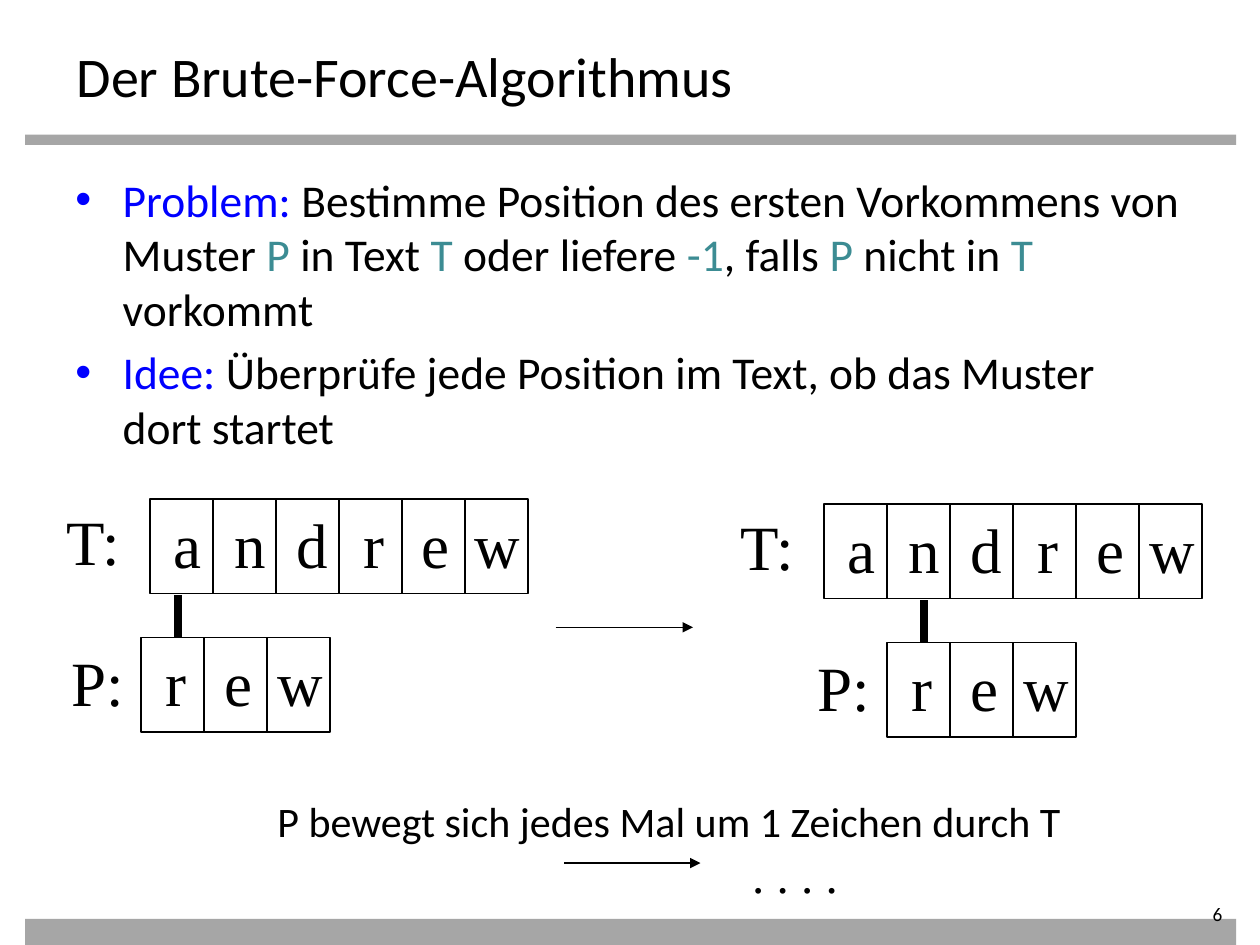
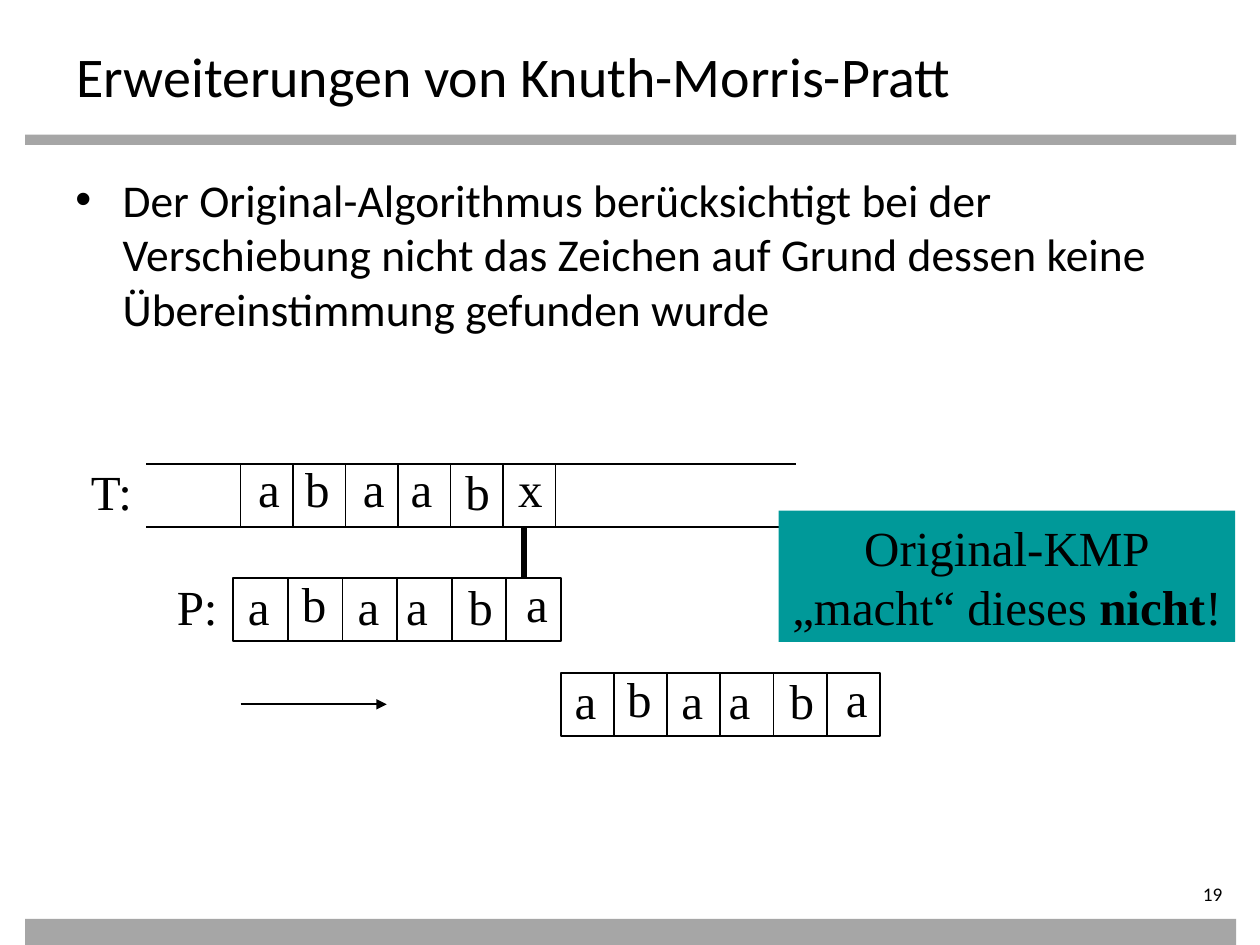
from pptx import Presentation
from pptx.dml.color import RGBColor
from pptx.enum.shapes import MSO_CONNECTOR as CONNECTOR, MSO_SHAPE as SHAPE
from pptx.enum.text import MSO_ANCHOR as ANCHOR, PP_ALIGN as ALIGN
from pptx.oxml.ns import qn
from pptx.util import Pt
from lxml.etree import SubElement

BLACK, GREY, BLUE, TEAL, CALLOUT = "000000", "A6A6A6", "0000FF", "3C8C93", "009999"
SANS, SERIF = "Calibri", "Times New Roman"

# Letter widths of the serif face, in ems
EM = {"a": .44, "e": .44, "r": .33, "w": .72, "T": .61, "P": .56, ":": .28}
# Sideways shifts of the letters within their cells
ANDREW_SHIFTS = {"a": 3.6, "n": 3.1, "d": 2.5, "r": 2, "e": 1.4, "w": 0.7}
TEXT_NUDGES = [(1.2, -4), (-1.1, -4), (1, -4), (-1.7, -4), (0.4, -2.5), (0.6, -4)]
PATTERN_NUDGES = [(-1, -2.5), (-0.6, -4), (-0.8, -2.5), (-4.2, -2.5), (1, -2.5), (2, -4)]


def rgb(value):
    return RGBColor.from_string(value)


def style(font, size, face, color=BLACK):
    font.size, font.name = Pt(size), face
    font.color.rgb = rgb(color)


def rect(slide, left, top, width, height, fill=None, line=None):
    shape = slide.shapes.add_shape(SHAPE.RECTANGLE, Pt(left), Pt(top), Pt(width), Pt(height))
    shape.shadow.inherit = False
    if fill:
        shape.fill.solid()
        shape.fill.fore_color.rgb = rgb(fill)
    else:
        shape.fill.background()
    if line:
        shape.line.color.rgb = rgb(line)
        shape.line.width = Pt(1)
    else:
        shape.line.fill.background()
    return shape


def rule(slide, x1, y1, x2, y2, weight=1, arrow=False):
    line = slide.shapes.add_connector(CONNECTOR.STRAIGHT, Pt(x1), Pt(y1), Pt(x2), Pt(y2))
    line.line.color.rgb = rgb(BLACK)
    line.line.width = Pt(weight)
    properties = line._element.spPr
    if arrow:
        SubElement(properties.find(qn("a:ln")), qn("a:tailEnd"), type="triangle")
    SubElement(properties, qn("a:effectLst"))


def text_box(slide, left, top, width, height, wrap=True):
    frame = slide.shapes.add_textbox(Pt(left), Pt(top), Pt(width), Pt(height)).text_frame
    frame.word_wrap = wrap
    return frame


def centred(slide, text, x, y, size, width=None, face=SERIF):
    """One line of text centred on a point."""
    if width is None:
        width = sum(EM.get(letter, 0.5) for letter in text) * size + 14.4
    height = size * 1.2 + 7.2
    frame = text_box(slide, x - width / 2, y - height / 2, width, height, wrap=False)
    frame.vertical_anchor = ANCHOR.MIDDLE
    frame.text = text
    frame.paragraphs[0].alignment = ALIGN.CENTER
    style(frame.paragraphs[0].runs[0].font, size, face)


def letters(slide, word, left, top, cell, height, size, nudges):
    for i, (letter, (dx, dy)) in enumerate(zip(word, nudges)):
        centred(slide, letter, left + (i + 0.5) * cell + dx, top + height / 2 + dy, size)


def dividers(slide, left, top, cell, height, positions):
    for i in positions:
        rule(slide, left + i * cell, top, left + i * cell, top + height)


def strip(slide, word, left, top, cell, height, size, nudges):
    """A framed row of letter cells."""
    rect(slide, left, top, cell * len(word), height, line=BLACK)
    dividers(slide, left, top, cell, height, range(1, len(word)))
    letters(slide, word, left, top, cell, height, size, nudges)


def bullet(paragraph):
    properties = paragraph._p.get_or_add_pPr()
    properties.set("marL", str(Pt(27)))
    properties.set("indent", str(-Pt(27)))
    SubElement(properties, qn("a:buFont"), typeface="Arial")
    SubElement(properties, qn("a:buChar"), char="•")


def base_slide(prs, title, bullets, number, number_top):
    """Bands, title, bullet text and slide number."""
    slide = prs.slides.add_slide(prs.slide_layouts[6])
    rect(slide, 14.4, 77, 692, 5.8, fill=GREY)
    rect(slide, 14.4, 525, 692, 15, fill=GREY)

    heading = text_box(slide, 36.7, 20.2, 648, 39.6)
    heading.text = title
    style(heading.paragraphs[0].runs[0].font, 32, SANS)

    body = text_box(slide, 36, 94.5, 648, 391)
    for i, parts in enumerate(bullets):
        paragraph = body.add_paragraph() if i else body.paragraphs[0]
        if i:
            paragraph.space_before = Pt(5.2)
        bullet(paragraph)
        for text, color in parts:
            run = paragraph.add_run()
            run.text = text
            style(run.font, 26, SANS, color)

    page = text_box(slide, 626.4, number_top, 79.2, 15.8)
    page.margin_left = page.margin_top = page.margin_bottom = 0
    page.text = number
    page.paragraphs[0].alignment = ALIGN.RIGHT
    style(page.paragraphs[0].runs[0].font, 11, SANS)
    return slide


def comparison(slide, left, top, shift):
    """Text T above pattern P, with P moved sideways by shift."""
    cell, height, size = 36, 54, 36
    pattern_left, pattern_top = left + shift, top + 79.2
    for word, x, y in (("andrew", left, top), ("rew", pattern_left, pattern_top)):
        nudges = [(ANDREW_SHIFTS[letter], -1.8) for letter in word]
        strip(slide, word, x, y, cell, height, size, nudges)
    centred(slide, "T:", left - 32.5, top + 23.8, size)
    centred(slide, "P:", pattern_left - 24.8, pattern_top + 25.2, size)
    tick = pattern_left + 21.2
    rule(slide, tick, top + height + 1, tick, pattern_top, weight=4.5)


def brute_force_slide(prs):
    bullets = [
        [("Problem: ", BLUE), ("Bestimme Position des ersten Vorkommens von Muster ", BLACK),
         ("P", TEAL), (" in Text ", BLACK), ("T", TEAL), (" oder liefere ", BLACK),
         ("-1", TEAL), (", falls ", BLACK), ("P", TEAL), (" nicht in ", BLACK),
         ("T", TEAL), (" vorkommt", BLACK)],
        [("Idee: ", BLUE),
         ("Überprüfe jede Position im Text, ob das Muster dort startet", BLACK)],
    ]
    slide = base_slide(prs, "Der Brute-Force-Algorithmus", bullets, "6", 515.5)
    comparison(slide, 85.7, 285.1, -5.1)
    rule(slide, 317.5, 358.5, 396, 358.5, arrow=True)
    comparison(slide, 470.9, 288, 36)

    # Continuation
    rule(slide, 322.5, 493.2, 400.3, 493.2, arrow=True)
    centred(slide, ". . . .", 454.3, 499.3, 28, width=63.4)
    centred(slide, "P bewegt sich jedes Mal um 1 Zeichen durch T", 382.3, 468.7, 24,
            width=486.7, face=SANS)


def open_text(slide, left, top, cell, height):
    """Section of a text that runs on at both sides."""
    for y in (top, top + height):
        rule(slide, left - 54, y, left + 317.5, y)
    dividers(slide, left, top, cell, height, range(7))
    letters(slide, "abaabx", left, top, cell, height, 28, TEXT_NUDGES)
    centred(slide, "T:", left - 73.8, top + height / 2 - 2.5, 28)


def callout(slide, left, top, width, height):
    box = rect(slide, left, top, width, height, fill=CALLOUT)
    frame = box.text_frame
    frame.word_wrap = False
    frame.vertical_anchor = ANCHOR.MIDDLE
    frame.text = "Original-KMP\n„macht“ dieses "
    for text in ("nicht", "!"):
        frame.paragraphs[1].add_run().text = text
    for paragraph in frame.paragraphs:
        paragraph.alignment = ALIGN.CENTER
        for run in paragraph.runs:
            style(run.font, 28, SERIF)
            run.font.bold = run.text == "nicht"


def knuth_morris_pratt_slide(prs):
    bullets = [[("Der Original-Algorithmus berücksichtigt bei der Verschiebung nicht das "
                 "Zeichen auf Grund dessen keine Übereinstimmung gefunden wurde", BLACK)]]
    slide = base_slide(prs, "Erweiterungen von Knuth-Morris-Pratt", bullets, "19", 504)
    height = 36
    open_text(slide, 137.5, 265, 30, height)
    rule(slide, 299.5, 301, 299.5, 330.5, weight=3)

    # Pattern before and after the move
    for left, top, cell in ((133.3, 330.5, 31.2), (320.4, 384.5, 30.4)):
        strip(slide, "abaaba", left, top, cell, height, 28, PATTERN_NUDGES)
    centred(slide, "P:", 112.7, 346, 28)
    rule(slide, 137.5, 402.5, 221, 402.5, arrow=True)
    callout(slide, 445, 291.8, 260.8, 75)


def main():
    prs = Presentation()
    prs.slide_width, prs.slide_height = Pt(720), Pt(540)
    brute_force_slide(prs)
    knuth_morris_pratt_slide(prs)
    prs.save("out.pptx")


if __name__ == "__main__":
    main()
